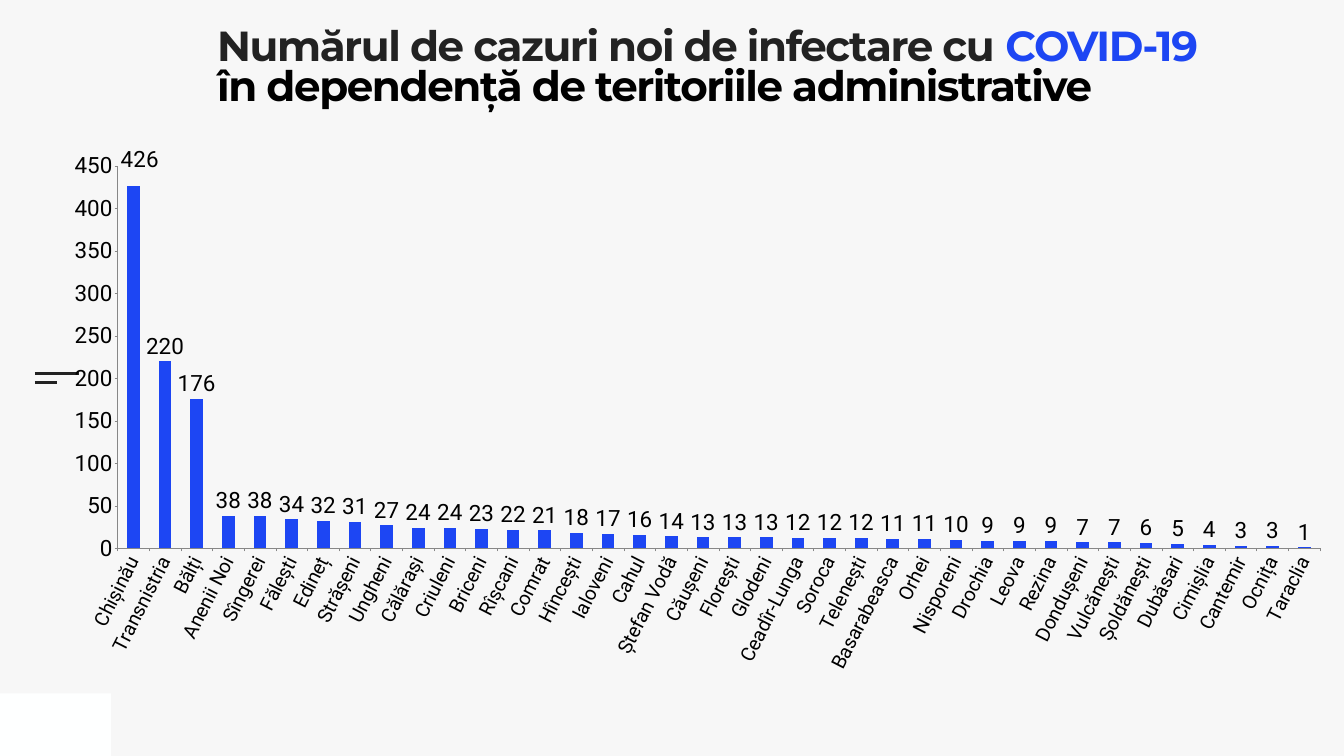
from typing import NamedTuple

from lxml.etree import SubElement
from pptx import Presentation
from pptx.chart.data import CategoryChartData
from pptx.dml.color import RGBColor
from pptx.enum.chart import XL_CHART_TYPE as ChartType
from pptx.enum.chart import XL_LABEL_POSITION as LabelPosition
from pptx.enum.chart import XL_TICK_MARK as TickMark
from pptx.enum.shapes import MSO_CONNECTOR as Connector
from pptx.enum.shapes import MSO_SHAPE as Shape
from pptx.oxml.ns import qn
from pptx.util import Inches, Pt

COLORS = {
    "background": "F7F7F7",
    "corner": "FEFFFF",
    "dark": "222222",
    "accent": "1D46F3",
    "black": "000000",
    "axis": "878787",
}

CASES = {
    "Chișinău": 426, "Transnistria": 220, "Bălți": 176, "Anenii Noi": 38,
    "Sîngerei": 38, "Fălești": 34, "Edineț": 32, "Strășeni": 31,
    "Ungheni": 27, "Călărași": 24, "Criuleni": 24, "Briceni": 23,
    "Rîșcani": 22, "Comrat": 21, "Hîncești": 18, "Ialoveni": 17,
    "Cahul": 16, "Ștefan Vodă": 14, "Căușeni": 13, "Florești": 13,
    "Glodeni": 13, "Ceadîr-Lunga": 12, "Soroca": 12, "Telenești": 12,
    "Basarabeasca": 11, "Orhei": 11, "Nisporeni": 10, "Drochia": 9,
    "Leova": 9, "Rezina": 9, "Dondușeni": 7, "Vulcănești": 7,
    "Șoldănești": 6, "Dubăsari": 5, "Cimișlia": 4, "Cantemir": 3,
    "Ocnița": 3, "Taraclia": 1,
}


class TitleRun(NamedTuple):
    text: str
    color: str


class MenuLine(NamedTuple):
    top: float
    length: float


TITLE = [
    [TitleRun("Numărul de cazuri noi de infectare cu ", "dark"),
     TitleRun("COVID-19", "accent")],
    [TitleRun("în dependență de teritoriile administrative", "black")],
]
MENU_LINES = [MenuLine(7.41, 0.88), MenuLine(7.59, 0.44)]


def color(name: str) -> RGBColor:
    return RGBColor.from_string(COLORS[name])


def set_font(font, size: float, name: str = "Roboto", color_name: str = "black") -> None:
    font.name = name
    font.size = Pt(size)
    font.color.rgb = color(color_name)


def add_corner(slide) -> None:
    corner = slide.shapes.add_shape(
        Shape.RECTANGLE, Inches(0), Inches(13.76), Inches(2.2), Inches(1.24))
    corner.shadow.inherit = False
    corner.fill.solid()
    corner.fill.fore_color.rgb = color("corner")
    corner.line.fill.background()


def add_menu_line(slide, line: MenuLine) -> None:
    left, top = 0.69, Inches(line.top)
    connector = slide.shapes.add_connector(
        Connector.STRAIGHT, Inches(left), top, Inches(left + line.length), top)
    connector.line.color.rgb = color("dark")
    connector.line.width = Pt(3)
    SubElement(connector._element.spPr, qn("a:effectLst"))


def add_title(slide) -> None:
    box = slide.shapes.add_textbox(
        Inches(4.31), Inches(0.58), Inches(20.02), Inches(2.73))
    frame = box.text_frame
    frame.word_wrap = True
    frame.margin_left = frame.margin_right = 0
    frame.margin_top = frame.margin_bottom = 0
    for index, title_runs in enumerate(TITLE):
        paragraph = frame.add_paragraph() if index else frame.paragraphs[0]
        paragraph.line_spacing = 0.8
        for title_run in title_runs:
            run = paragraph.add_run()
            run.text = title_run.text
            set_font(run.font, 60, "Montserrat", title_run.color)
            run.font.bold = True
            run.font._element.set("spc", "-200")


def make_layout(parent, index: int, **values) -> None:
    """Insert a manual chart layout as the child of parent at index."""
    layout = SubElement(parent, qn("c:layout"))
    manual = SubElement(layout, qn("c:manualLayout"))
    for tag, value in values.items():
        SubElement(manual, qn(f"c:{tag}")).set("val", str(value))
    parent.insert(index, layout)


def style_axis(axis, size: float) -> None:
    axis.has_major_gridlines = False
    axis.major_tick_mark = TickMark.OUTSIDE
    axis.minor_tick_mark = TickMark.NONE
    axis.format.line.color.rgb = color("axis")
    axis.format.line.width = Pt(0.75)
    set_font(axis.tick_labels.font, size)


def add_case_chart(slide) -> None:
    data = CategoryChartData()
    data.categories = list(CASES)
    data.add_series("Series 1", list(CASES.values()))
    chart = slide.shapes.add_chart(
        ChartType.COLUMN_CLUSTERED, Inches(1.1), Inches(2.68),
        Inches(25.17), Inches(11.85), data).chart
    chart.has_title = False
    chart.has_legend = False
    set_font(chart.font, 40)

    style_axis(chart.category_axis, 28)
    text_body = chart.category_axis._element.find(qn("c:txPr")).find(qn("a:bodyPr"))
    text_body.set("rot", str(-63 * 60000))
    text_body.set("vert", "horz")
    style_axis(chart.value_axis, 32)
    chart.value_axis.minimum_scale = 0
    chart.value_axis.maximum_scale = 450
    chart.value_axis.major_unit = 50

    plot = chart.plots[0]
    plot.gap_width = 150
    plot.vary_by_categories = False
    series = plot.series[0]
    series.format.fill.solid()
    series.format.fill.fore_color.rgb = color("accent")
    series.invert_if_negative = False
    labels = series.data_labels
    labels.show_value = True
    labels.position = LabelPosition.OUTSIDE_END
    set_font(labels.font, 32)

    first_label = series.points[0].data_label
    set_font(first_label.font, 32)
    first_label.position = LabelPosition.OUTSIDE_END
    label_element = labels._element.find(qn("c:dLbl"))
    make_layout(label_element, 1, x=0.005, y=-0.02)

    plot_area = chart._chartSpace.chart.plotArea
    for layout in plot_area.findall(qn("c:layout")):
        plot_area.remove(layout)
    make_layout(plot_area, 0, layoutTarget="inner", xMode="edge", yMode="edge",
                x=0.049, y=0.052, w=0.948, h=0.64)


def main() -> None:
    presentation = Presentation()
    presentation.slide_width = Inches(26.67)
    presentation.slide_height = Inches(15)
    slide = presentation.slides.add_slide(presentation.slide_layouts[6])
    slide.background.fill.solid()
    slide.background.fill.fore_color.rgb = color("background")
    add_corner(slide)
    for line in MENU_LINES:
        add_menu_line(slide, line)
    add_title(slide)
    add_case_chart(slide)
    presentation.save("out.pptx")


if __name__ == "__main__":
    main()
